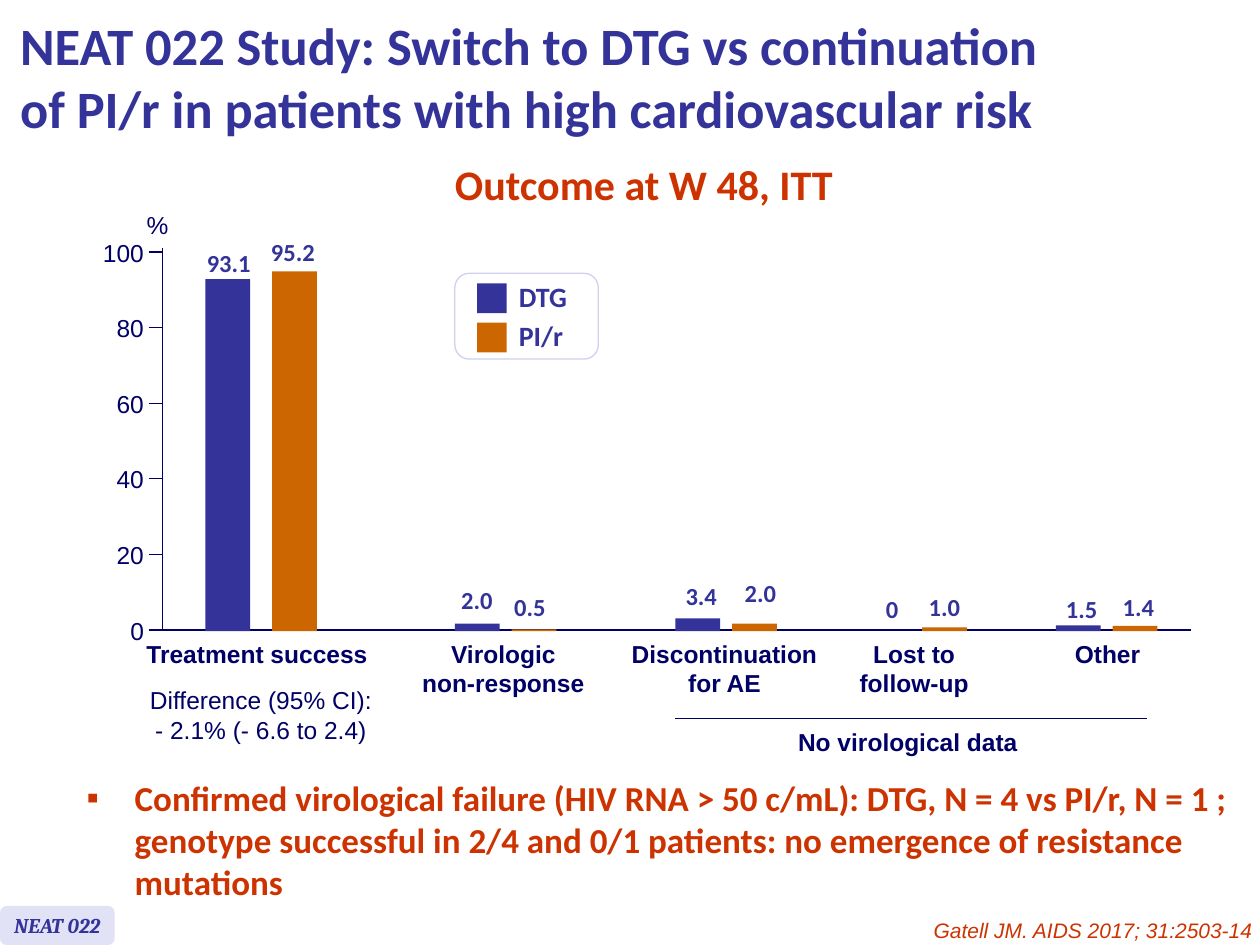
from dataclasses import dataclass

from lxml import etree
from pptx import Presentation
from pptx.dml.color import RGBColor
from pptx.enum.shapes import MSO_CONNECTOR, MSO_SHAPE
from pptx.enum.text import MSO_ANCHOR, MSO_AUTO_SIZE, PP_ALIGN
from pptx.oxml.ns import qn
from pptx.util import Pt

LEFT, CENTER, RIGHT = PP_ALIGN.LEFT, PP_ALIGN.CENTER, PP_ALIGN.RIGHT
TOP, MIDDLE = MSO_ANCHOR.TOP, MSO_ANCHOR.MIDDLE
RECTANGLE, ROUNDED = MSO_SHAPE.RECTANGLE, MSO_SHAPE.ROUNDED_RECTANGLE
STRAIGHT = MSO_CONNECTOR.STRAIGHT
NO_AUTOFIT = MSO_AUTO_SIZE.NONE
TITLE_ONLY = 5


@dataclass(frozen=True)
class Style:
    font: str
    size: float
    color: str
    bold: bool = False
    italic: bool = False


@dataclass(frozen=True)
class Theme:
    dtg: str = "333399"
    pir: str = "CC6600"
    axis: str = "000066"
    white: str = "FFFFFF"
    legend_edge: str = "D0D0F0"
    badge_fill: str = "E2E2F6"
    accent: str = "CC3300"
    title: Style = Style("Calibri", 30, "333399", bold=True)
    heading: Style = Style("Calibri", 24, "CC3300", bold=True)
    finding: Style = Style("Calibri", 20, "CC3300", bold=True)
    legend: Style = Style("Calibri", 16, "333399", bold=True)
    value: Style = Style("Calibri", 14, "333399", bold=True)
    category: Style = Style("Arial", 14, "000066", bold=True)
    scale: Style = Style("Arial", 14, "000066")
    badge: Style = Style("Cambria", 12, "333399", bold=True, italic=True)
    citation: Style = Style("Arial", 12, "CC3300", italic=True)


class SlideBuilder:
    """Holds the theme and the current slide, and draws each kind of element."""

    def __init__(self, slide, theme):
        self.slide = slide
        self.theme = theme

    def fill_text(self, frame, paragraphs, style, align=LEFT, wrap=False, anchor=TOP):
        frame.word_wrap = wrap
        frame.vertical_anchor = anchor
        for number, lines in enumerate(paragraphs):
            paragraph = frame.add_paragraph() if number else frame.paragraphs[0]
            paragraph.alignment = align
            for index, line in enumerate(lines.split("\n")):
                if index:
                    paragraph.add_line_break()
                run = paragraph.add_run()
                run.text = line
                font = run.font
                font.name, font.size = style.font, Pt(style.size)
                font.bold, font.italic = style.bold, style.italic
                font.color.rgb = RGBColor.from_string(style.color)
        return frame.paragraphs[0]

    def title(self, text, left, top, width, height):
        holder = self.slide.shapes.title
        holder.left, holder.top = Pt(left), Pt(top)
        holder.width, holder.height = Pt(width), Pt(height)
        holder.text_frame.auto_size = NO_AUTOFIT
        self.fill_text(holder.text_frame, [text], self.theme.title, wrap=True)

    def text(self, paragraphs, style, left, top, width, height=24.5, align=CENTER, wrap=False):
        box = self.slide.shapes.add_textbox(Pt(left), Pt(top), Pt(width), Pt(height))
        return self.fill_text(box.text_frame, paragraphs, style, align, wrap)

    def centered(self, paragraphs, style, center, top, width):
        height = 7.2 + 17 * len(paragraphs)
        self.text(paragraphs, style, center - width / 2, top, width, height)

    def bullet(self, text, style, left, top, width, height, indent):
        paragraph = self.text([text], style, left, top, width, height, LEFT, True)
        properties = paragraph._p.get_or_add_pPr()
        properties.set("marL", str(Pt(indent)))
        properties.set("indent", str(-Pt(indent)))
        color = etree.SubElement(properties, qn("a:buClr"))
        etree.SubElement(color, qn("a:srgbClr"), val=self.theme.accent)
        etree.SubElement(properties, qn("a:buFont"), typeface="Arial")
        etree.SubElement(properties, qn("a:buChar"), char="▪")

    def block(self, kind, left, top, width, height, fill, edge=None):
        shape = self.slide.shapes.add_shape(kind, Pt(left), Pt(top), Pt(width), Pt(height))
        shape.shadow.inherit = False
        shape.fill.solid()
        shape.fill.fore_color.rgb = RGBColor.from_string(fill)
        if edge:
            shape.line.color.rgb = RGBColor.from_string(edge)
            shape.line.width = Pt(0.75)
        else:
            shape.line.fill.background()
        return shape

    def line(self, x1, y1, x2, y2, width=0.63):
        rule = self.slide.shapes.add_connector(STRAIGHT, Pt(x1), Pt(y1), Pt(x2), Pt(y2))
        rule.line.color.rgb = RGBColor.from_string(self.theme.axis)
        rule.line.width = Pt(width)
        etree.SubElement(rule._element.spPr, qn("a:effectLst"))


AXIS_X, BASE_Y, PER_PERCENT = 92.9, 360, 2.16
BAR_WIDTH, BAR_DROP = 25.6, 0.7

OUTCOMES = [
    (["Treatment success"], 146.9, 141,
     [("93.1", 117.4, 130.7, 138.2), ("95.2", 155.5, 167.4, 131.8)]),
    (["Virologic", "non-response"], 287.6, 107,
     [("2.0", 259.9, 272.5, 330.5), ("0.5", 292.3, 302.8, 334.8)]),
    (["Discontinuation", "for AE"], 414, 121,
     [("3.4", 385.9, 400.7, 328.3), ("2.0", 418.3, 434.5, 326.9)]),
    (["Lost to", "follow-up"], 522.4, 77,
     [("0", 494.6, 509.8, 336.2), ("1.0", 527, 539.6, 334.8)]),
    (["Other"], 632.9, 52,
     [("1.5", 603.4, 618.1, 336.2), ("1.4", 635.8, 650.5, 334.8)]),
]


def draw_axes(builder):
    scale = builder.theme.scale
    builder.line(AXIS_X, BASE_Y, 680.4, BASE_Y)
    builder.line(AXIS_X, BASE_Y, AXIS_X, 141.8)
    for percent in range(0, 101, 20):
        y = BASE_Y - percent * PER_PERCENT
        builder.line(85, y, AXIS_X, y)
        builder.text([str(percent)], scale, 51.3, y - 11.8, 38, align=RIGHT)
    builder.text(["%"], scale, 76.3, 116.6, 27.4)


def draw_outcomes(builder):
    theme = builder.theme
    for category, center, width, bars in OUTCOMES:
        for (value, left, label_center, label_top), fill in zip(bars, (theme.dtg, theme.pir)):
            height = float(value) * PER_PERCENT
            if height:
                top = BASE_Y + BAR_DROP - height
                builder.block(RECTANGLE, left, top, BAR_WIDTH, height, fill)
            builder.centered([value], theme.value, label_center, label_top, 40)
        builder.centered(category, theme.category, center, 361.4, width)


def draw_legend(builder):
    theme = builder.theme
    builder.block(ROUNDED, 259.9, 156.2, 82, 49, theme.white, theme.legend_edge)
    for row, (arm, fill) in enumerate((("DTG", theme.dtg), ("PI/r", theme.pir))):
        offset = row * 22.4
        builder.block(RECTANGLE, 272.6, 162 + offset, 17, 17, fill)
        builder.text([arm], theme.legend, 289.4, 156.2 + offset, 42, 26.6, LEFT)


def main():
    theme = Theme()
    deck = Presentation()
    deck.slide_width, deck.slide_height = Pt(720), Pt(540)
    builder = SlideBuilder(deck.slides.add_slide(deck.slide_layouts[TITLE_ONLY]), theme)

    builder.title("NEAT 022 Study: Switch to DTG vs continuation\n"
                  "of PI/r in patients with high cardiovascular risk", 4.3, 3.6, 710.6, 87.1)
    heading = builder.text(["Outcome at W 48, ITT"], theme.heading, 15.8, 100.8, 704.2, 25.2,
                           wrap=True)
    heading.line_spacing = Pt(15.2)

    draw_axes(builder)
    draw_outcomes(builder)
    draw_legend(builder)

    builder.text(["Difference (95% CI):\n- 2.1% (- 6.6 to 2.4)"], theme.scale,
                 77.8, 388.1, 142.6, 41)
    builder.line(385.9, 410.4, 655.2, 410.4, 0.75)
    builder.text(["No virological data"], theme.category, 448.6, 411.8, 140.4)

    builder.bullet("Confirmed virological failure (HIV RNA > 50 c/mL): DTG, N = 4 vs PI/r, N = 1 ; "
                   "genotype successful in 2/4 and 0/1 patients: no emergence of resistance "
                   "mutations", theme.finding, 42.5, 439.9, 672.5, 79.9, 27.4)
    badge = builder.block(ROUNDED, 0, 517.7, 65.5, 22.3, theme.badge_fill)
    builder.fill_text(badge.text_frame, ["NEAT 022"], theme.badge, CENTER, anchor=MIDDLE)
    builder.text(["Gatell JM. AIDS 2017; 31:2503-14"], theme.citation, 470.9, 520.6, 252, 21.6,
                 RIGHT, True)
    deck.save("out.pptx")


if __name__ == "__main__":
    main()
